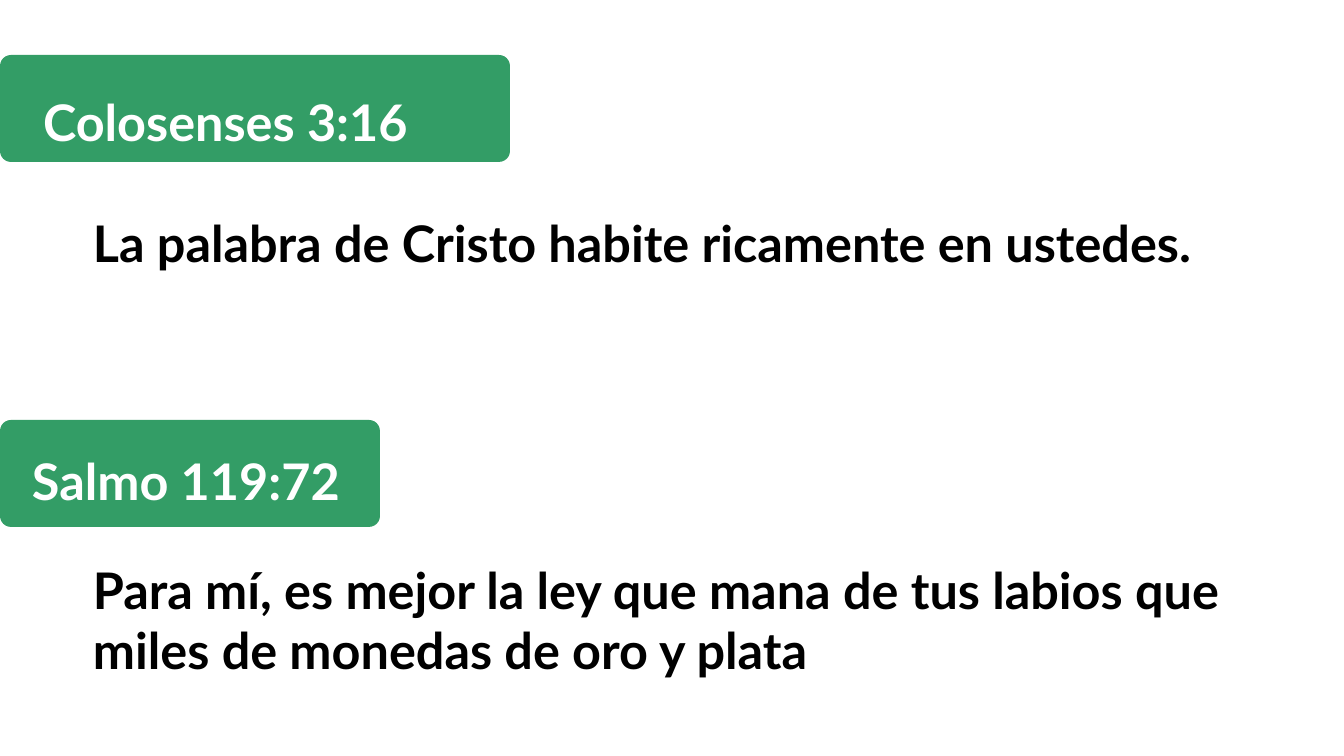
"""Build a slide with two Bible verses, each under a green reference badge."""
from dataclasses import dataclass

import pptx
import pptx.dml.color
import pptx.enum.shapes
import pptx.enum.text
import pptx.util
from lxml import etree

VERSES = [
    {
        "reference": "Colosenses 3:16",
        "verse": "La palabra de Cristo habite ricamente en ustedes.",
        "badge_box": (0, 55, 510, 107),
        "reference_box": (43, 67, 572, 86),
        "verse_box": (93, 215, 1164, 212),
        "placeholders": (0, 2),
    },
    {
        "reference": "Salmo 119:72",
        "verse": "Para mí, es mejor la ley que mana de tus labios que miles de monedas de oro y plata",
        "badge_box": (0, 420, 380, 107),
        "reference_box": (32, 426, 605, 86),
        "verse_box": (93, 562, 1164, 212),
        "placeholders": (3, 4),
    },
]
SPARE_PLACEHOLDER = 1
COMPARISON_LAYOUT = 4
EMU_PER_PX = 914400 / 100.8


@dataclass(frozen=True)
class Theme:
    font: str = "Lato"
    size: int = 36
    badge: str = "008540"
    badge_opacity: int = 80
    badge_radius: int = 11
    reference: str = "FFFFFF"
    verse: str = "000000"
    reference_spacing: float = 1.4
    verse_spacing: float = 0.99


THEME = Theme()


def px(length):
    return pptx.util.Emu(round(length * EMU_PER_PX))


def rgb(color):
    return pptx.dml.color.RGBColor.from_string(color)


def add_badge(slide, box):
    badge = slide.shapes.add_shape(
        pptx.enum.shapes.MSO_SHAPE.ROUNDED_RECTANGLE, *map(px, box))
    badge.adjustments[0] = THEME.badge_radius / min(box[2:])
    badge.shadow.inherit = False
    badge.line.fill.background()
    badge.fill.solid()
    badge.fill.fore_color.rgb = rgb(THEME.badge)
    color = badge.element.spPr.find(".//" + pptx.oxml.ns.qn("a:srgbClr"))
    etree.SubElement(color, pptx.oxml.ns.qn("a:alpha"), val=str(THEME.badge_opacity * 1000))
    slide.shapes.element.insert(2, badge.element)


def write(holder, text, box, color, spacing):
    holder.left, holder.top, holder.width, holder.height = map(px, box)
    frame = holder.text_frame
    frame.text = text
    frame.word_wrap = True
    frame.auto_size = pptx.enum.text.MSO_AUTO_SIZE.NONE
    frame.vertical_anchor = pptx.enum.text.MSO_ANCHOR.TOP
    frame.margin_left = frame.margin_top = frame.margin_right = frame.margin_bottom = 0

    paragraph = frame.paragraphs[0]
    paragraph.alignment = pptx.enum.text.PP_ALIGN.LEFT
    paragraph.line_spacing = spacing
    paragraph.space_before = paragraph.space_after = pptx.util.Pt(0)
    paragraph.font.name = THEME.font
    paragraph.font.size = pptx.util.Pt(THEME.size)
    paragraph.font.bold = True
    paragraph.font.color.rgb = rgb(color)

    properties = paragraph._p.get_or_add_pPr()
    properties.set("marL", "0")
    properties.set("indent", "0")
    no_bullet = etree.Element(pptx.oxml.ns.qn("a:buNone"))
    properties.find(pptx.oxml.ns.qn("a:defRPr")).addprevious(no_bullet)


def main():
    deck = pptx.Presentation()
    deck.slide_width, deck.slide_height = px(1344), px(756)
    slide = deck.slides.add_slide(deck.slide_layouts[COMPARISON_LAYOUT])
    holders = {holder.placeholder_format.idx: holder for holder in slide.placeholders}
    spare = holders[SPARE_PLACEHOLDER].element
    spare.getparent().remove(spare)

    for entry in VERSES:
        reference, verse = (holders[idx] for idx in entry["placeholders"])
        add_badge(slide, entry["badge_box"])
        write(reference, entry["reference"], entry["reference_box"],
              THEME.reference, THEME.reference_spacing)
        write(verse, entry["verse"], entry["verse_box"],
              THEME.verse, THEME.verse_spacing)

    deck.save("out.pptx")


if __name__ == "__main__":
    main()
